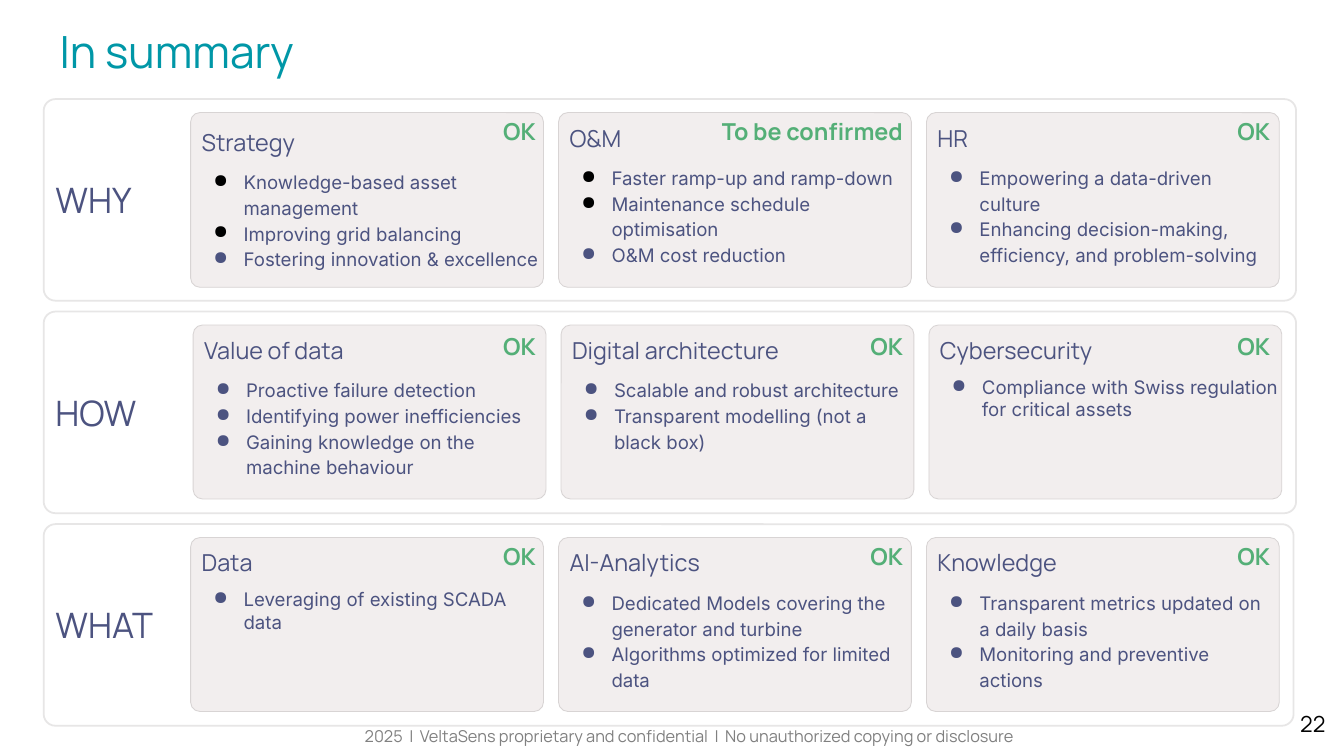
from lxml import etree
from pptx import Presentation
from pptx.dml.color import RGBColor
from pptx.enum.shapes import MSO_SHAPE
from pptx.enum.text import MSO_ANCHOR, MSO_AUTO_SIZE, PP_ALIGN
from pptx.oxml.ns import qn
from pptx.util import Inches, Pt

INDIGO, GREEN, BLACK = "4C5380", "54AF77", "000000"
color = RGBColor.from_string


def set_frame(tf, insets, anchor=MSO_ANCHOR.TOP):
    left, top, right, bottom = (Inches(v) for v in insets)
    values = {"margin_left": left, "margin_top": top, "margin_right": right,
              "margin_bottom": bottom, "vertical_anchor": anchor,
              "word_wrap": True, "auto_size": MSO_AUTO_SIZE.NONE}
    for name, value in values.items():
        setattr(tf, name, value)


def add_text(p, text, size, hex_color, font="Manrope", bold=False, align=PP_ALIGN.LEFT):
    p.alignment = align
    r = p.add_run()
    r.text = text
    for name, value in {"size": Pt(size), "name": font, "bold": bold}.items():
        setattr(r.font, name, value)
    r.font.color.rgb = color(hex_color)


# Each row: label, width, card left, card top, card height, badge top, cards
# Each card: heading, badge, number of black bullets, bullet texts
rows = [
    ("WHY", 14.91, 2.27, 1.34, 2.08, 1.4, [
        ("Strategy", "OK", 2, ["Knowledge-based asset management",
                               "Improving grid balancing",
                               "Fostering innovation & excellence"]),
        ("O&M", "To be confirmed", 2, ["Faster ramp-up and ramp-down",
                                       "Maintenance schedule optimisation",
                                       "O&M cost reduction"]),
        ("HR", "OK", 0, ["Empowering a data-driven culture",
                         "Enhancing decision-making, efficiency, and problem-solving"]),
    ]),
    ("HOW", 14.91, 2.3, 3.87, 2.07, 3.96, [
        ("Value of data", "OK", 0, ["Proactive failure detection",
                                    "Identifying power inefficiencies",
                                    "Gaining knowledge on the machine behaviour"]),
        ("Digital architecture", "OK", 0, ["Scalable and robust architecture",
                                           "Transparent modelling (not a black box)"]),
        ("Cybersecurity", "OK", 0, ["Compliance with Swiss regulation for critical assets"]),
    ]),
    ("WHAT", 14.88, 2.27, 6.4, 2.07, 6.45, [
        ("Data", "OK", 0, ["Leveraging of existing SCADA data"]),
        ("AI-Analytics", "OK", 0, ["Dedicated Models covering the generator and turbine",
                                   "Algorithms optimized for limited data"]),
        ("Knowledge", "OK", 0, ["Transparent metrics updated on a daily basis",
                                "Monitoring and preventive actions"]),
    ]),
]

prs = Presentation()
prs.slide_width, prs.slide_height = Inches(16), Inches(9)
s = prs.slides.add_slide(prs.slide_layouts[5])

# Title
title = s.shapes.title
title.left, title.top = Inches(0.55), Inches(0.13)
title.width, title.height = Inches(14.91), Inches(1)
set_frame(title.text_frame, [0.16] * 4)
add_text(title.text_frame.paragraphs[0], "In summary", 38, "0097A7")

# Footer and slide number
footer = "2025  |  VeltaSens proprietary and confidential  |  No unauthorized copying or disclosure"
for text, box, inset, size, hex_color, align in [
    (footer, (1.51, 8.55, 13.4, 0.44), 0.1, 14, "808080", PP_ALIGN.CENTER),
    ("22", (14.97, 8.31, 0.96, 0.69), 0.15, 19, BLACK, PP_ALIGN.RIGHT),
]:
    tf = s.shapes.add_textbox(*(Inches(v) for v in box)).text_frame
    set_frame(tf, [inset] * 4)
    add_text(tf.paragraphs[0], text, size, hex_color, align=align)

for i, (label, width, card_left, card_top, card_height, badge_top, cards) in enumerate(rows):
    # Row frame with its label
    group = s.shapes.add_group_shape()
    sp = group.shapes.add_shape(MSO_SHAPE.ROUNDED_RECTANGLE, Inches(0.52),
                                Inches(1.18 + 2.53 * i), Inches(width), Inches(2.4))
    sp.adjustments[0] = 0.058
    sp.shadow.inherit = False
    sp.fill.background()
    sp.line.color.rgb = color("E7E6E6")
    sp.line.width = Pt(1.5)
    set_frame(sp.text_frame, [0.1] * 4, MSO_ANCHOR.MIDDLE)
    add_text(sp.text_frame.paragraphs[0], label, 30, INDIGO)

    for j, (heading, badge, black_bullets, bullets) in enumerate(cards):
        # Card
        sp = group.shapes.add_shape(MSO_SHAPE.ROUNDED_RECTANGLE, Inches(card_left + 4.38 * j),
                                    Inches(card_top), Inches(4.2), Inches(card_height))
        sp.adjustments[0] = 0.053
        sp.shadow.inherit = False
        sp.fill.solid()
        sp.fill.fore_color.rgb = color("F2EEEE")
        sp.line.color.rgb = color("D8D4D4")
        sp.line.width = Pt(0.75)
        tf = sp.text_frame
        set_frame(tf, (0.1, 0.1, 0, 0))
        add_text(tf.paragraphs[0], heading, 20, INDIGO)
        if heading == "Strategy":
            tf.paragraphs[0].line_spacing = 1.15

        # Bullets
        for k, text in enumerate(bullets):
            p = tf.add_paragraph()
            add_text(p, text, 16, INDIGO, "Inter")
            p.line_spacing = 1.15 if len(bullets) > 1 else 1.0
            p.space_before = Pt(0 if k else 10)
            pPr = p._p.get_or_add_pPr()
            pPr.set("marL", str(Inches(0.5)))
            pPr.set("indent", str(Inches(-0.36)))
            buClr = etree.SubElement(pPr, qn("a:buClr"))
            bullet_color = BLACK if k < black_bullets else INDIGO
            etree.SubElement(buClr, qn("a:srgbClr"), val=bullet_color)
            etree.SubElement(pPr, qn("a:buChar"), char="●")

        # Status badge, aligned to the right of the card
        badge_width = 0.8 if badge == "OK" else 2.46
        tb = s.shapes.add_textbox(Inches(6.38 + 4.37 * j - badge_width), Inches(badge_top),
                                  Inches(badge_width), Inches(0.46))
        set_frame(tb.text_frame, [0] * 4)
        add_text(tb.text_frame.paragraphs[0], badge, 20, GREEN, bold=True, align=PP_ALIGN.RIGHT)

prs.save("out.pptx")
